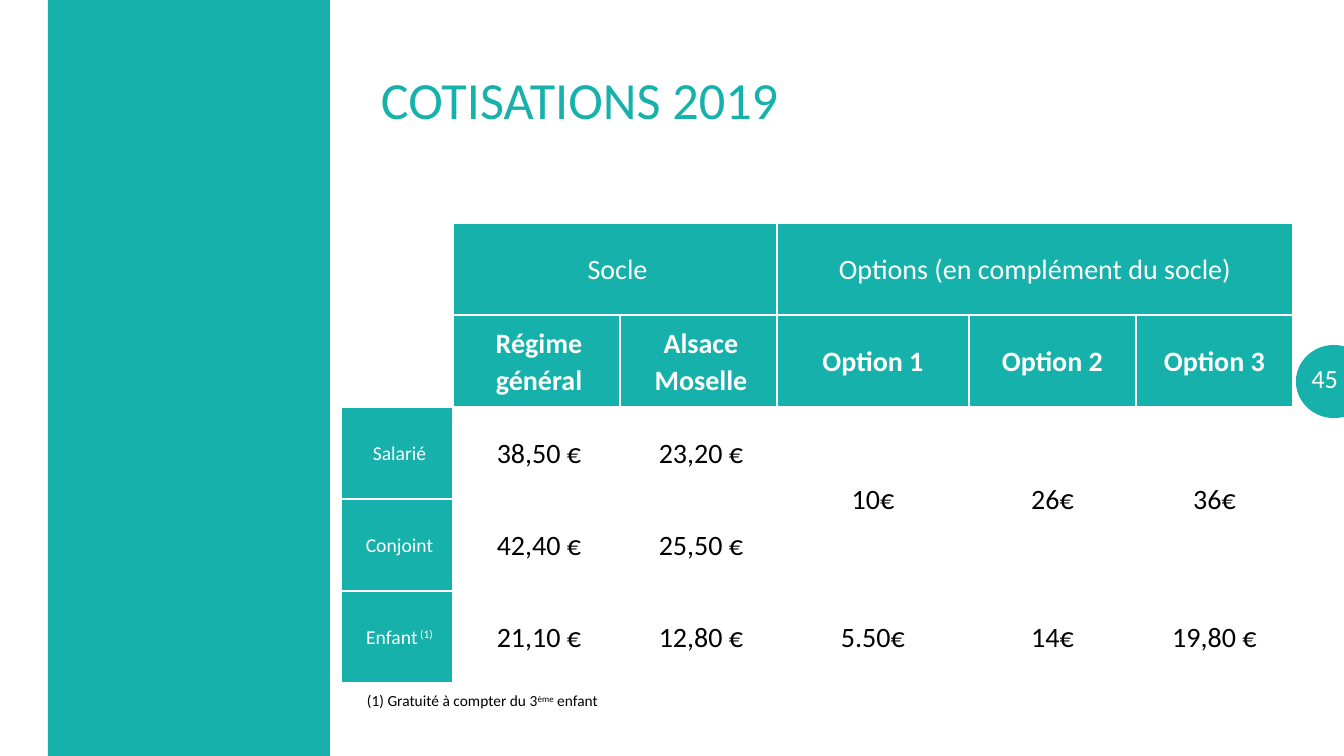
from lxml import etree
from pptx import Presentation
from pptx.dml.color import RGBColor
from pptx.enum import shapes, text
from pptx.oxml import ns
from pptx.util import Pt

# Content: text between ^ marks is superscript
TITLE = "COTISATIONS 2019"
PAGE = "45"
NOTE = "(1) Gratuité à compter du 3^ème^ enfant"
ROWS = [
    ["", "Socle", "", "Options (en complément du socle)", "", ""],
    ["", "Régime général", "Alsace Moselle", "Option 1", "Option 2", "Option 3"],
    ["Salarié", "38,50 €", "23,20 €", "10€", "26€", "36€"],
    ["Conjoint", "42,40 €", "25,50 €", "", "", ""],
    ["Enfant^ (1)^", "21,10 €", "12,80 €", "5.50€", "14€", "19,80 €"],
]
MERGES = [((0, 1), (0, 2)), ((0, 3), (0, 5))]
MERGES += [((2, c), (3, c)) for c in (3, 4, 5)]

# Layout in px
W, H = 1344, 756
TABLE_LEFT, TABLE_TOP, ROW_H = 341, 223, 92
COL_W = [112, 167, 157, 192, 167, 157]
HEADER_ROWS, SOCLE_COLS = 2, 3

TEAL = RGBColor(0x16, 0xB1, 0xAB)
WHITE = RGBColor(0xFF, 0xFF, 0xFF)
BLACK = RGBColor(0, 0, 0)
FONT = "Calibri"


def px(n):
    return round(n * 914400 / 100.8)


def write(tf, content, size, color, bold=False, align=text.PP_ALIGN.LEFT,
          spacing=None, indent=0):
    p = tf.paragraphs[0]
    p.alignment = align
    if spacing:
        p.line_spacing = spacing
    if indent:
        p._p.get_or_add_pPr().set("marL", str(px(indent)))
    for i, part in enumerate(content.split("^")):
        if not part:
            continue
        r = p.add_run()
        r.text = part
        r.font.name, r.font.size, r.font.bold = FONT, Pt(size), bold
        r.font.color.rgb = color
        if i % 2:
            r.font._element.set("baseline", "30000")


def add_text(box, content, size, color, **fmt):
    tf = slide.shapes.add_textbox(*map(px, box)).text_frame
    tf.word_wrap = True
    tf.vertical_anchor = text.MSO_ANCHOR.MIDDLE
    write(tf, content, size, color, **fmt)
    return tf


def add_solid(kind, box):
    sp = slide.shapes.add_shape(kind, *map(px, box))
    sp.shadow.inherit = False
    sp.fill.solid()
    sp.fill.fore_color.rgb = TEAL
    sp.line.fill.background()
    return sp


def set_borders(cell):
    tcPr = cell._tc.get_or_add_tcPr()
    for i, side in enumerate(("lnL", "lnR", "lnT", "lnB")):
        ln = etree.Element(ns.qn("a:" + side), w=str(Pt(1)))
        fill = etree.SubElement(ln, ns.qn("a:solidFill"))
        etree.SubElement(fill, ns.qn("a:srgbClr"), val=str(WHITE))
        tcPr.insert(i, ln)


prs = Presentation()
prs.slide_width, prs.slide_height = px(W), px(H)
slide = prs.slides.add_slide(prs.slide_layouts[6])

# Side band and page number
add_solid(shapes.MSO_SHAPE.RECTANGLE, (48, 0, 282, H))
badge = add_solid(shapes.MSO_SHAPE.OVAL, (1297, 346, 74, 71))
badge.line.color.rgb = TEAL
badge.line.width = Pt(1.5)
tf = add_text((1293, 358, 58, 40), PAGE, 18.7, WHITE, align=text.PP_ALIGN.RIGHT)
tf.margin_left = tf.margin_right = px(13)
tf.margin_top = tf.margin_bottom = px(7)

# Title
add_text((371, 60, 922, 78), TITLE, 37.3, TEAL)

# Contribution table
table = slide.shapes.add_table(
    len(ROWS), len(COL_W), px(TABLE_LEFT), px(TABLE_TOP),
    px(sum(COL_W)), px(ROW_H * len(ROWS))).table
table.first_row = table.horz_banding = False
for col, width in zip(table.columns, COL_W):
    col.width = px(width)
for row in table.rows:
    row.height = px(ROW_H)
for first, last in MERGES:
    table.cell(*first).merge(table.cell(*last))

for r, values in enumerate(ROWS):
    for c, value in enumerate(values):
        cell = table.cell(r, c)
        is_label = (r < HEADER_ROWS) != (c == 0)
        cell.fill.solid()
        cell.fill.fore_color.rgb = TEAL if is_label else WHITE
        set_borders(cell)
        cell.vertical_anchor = text.MSO_ANCHOR.MIDDLE
        cell.margin_left = cell.margin_right = px(5)
        cell.margin_top = cell.margin_bottom = 0
        write(cell.text_frame, value, 14 if c == 0 else 20,
              WHITE if is_label else BLACK, bold=r == 1,
              align=text.PP_ALIGN.CENTER, spacing=1.07,
              indent=5 if c < SOCLE_COLS else 0)

# Footnote
add_text((357, 686, 304, 29), NOTE, 11, BLACK)

prs.save("out.pptx")
